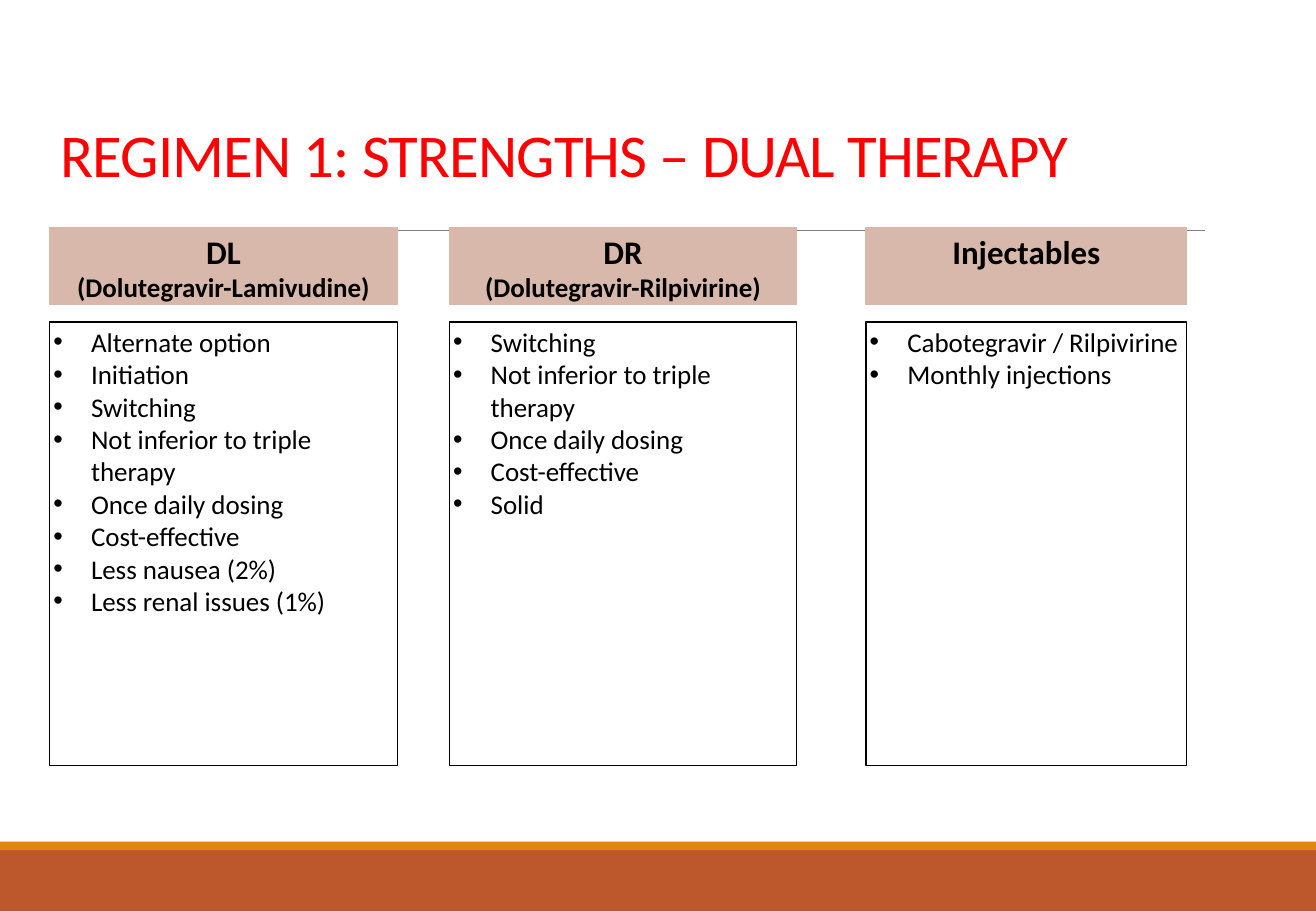
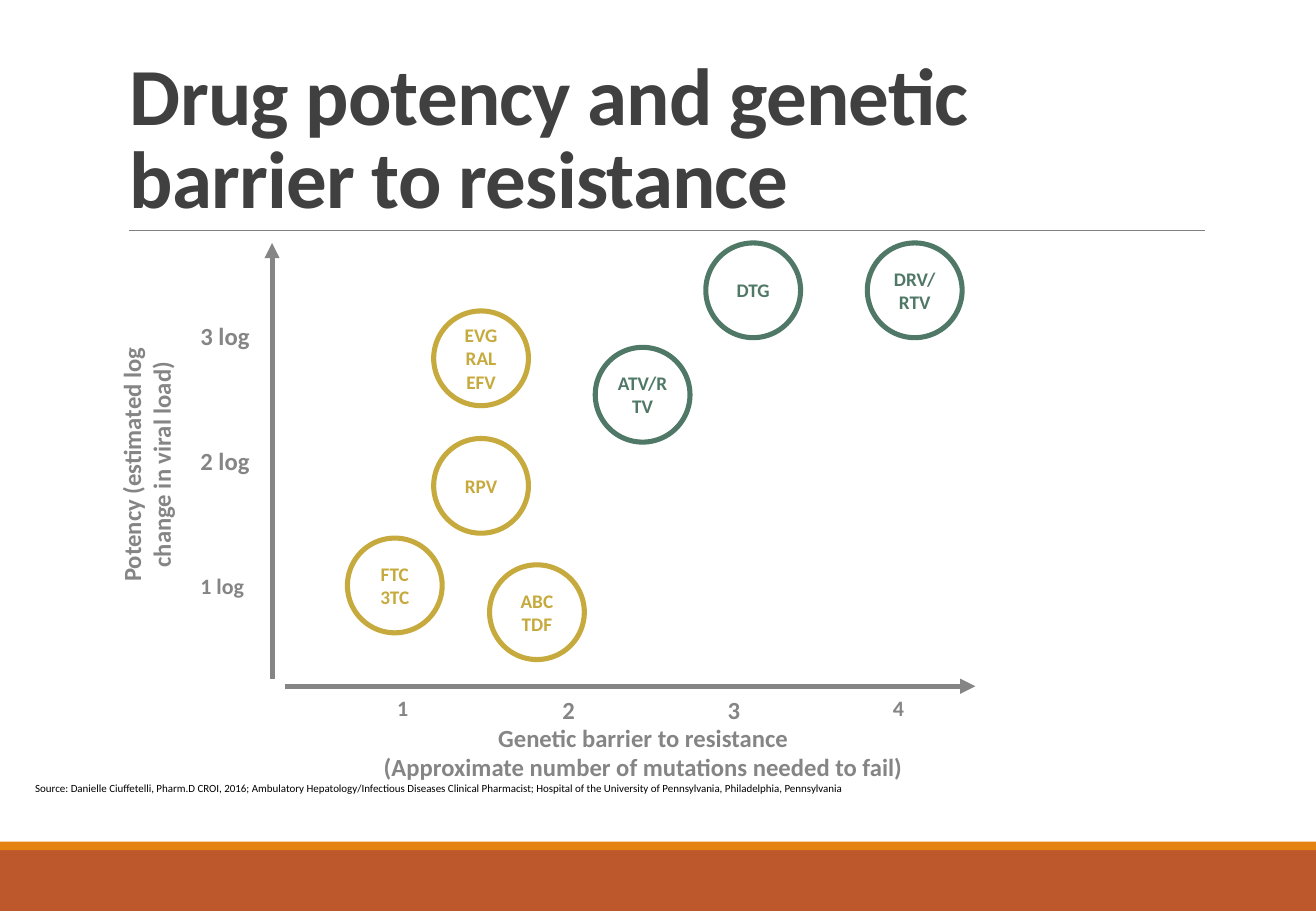
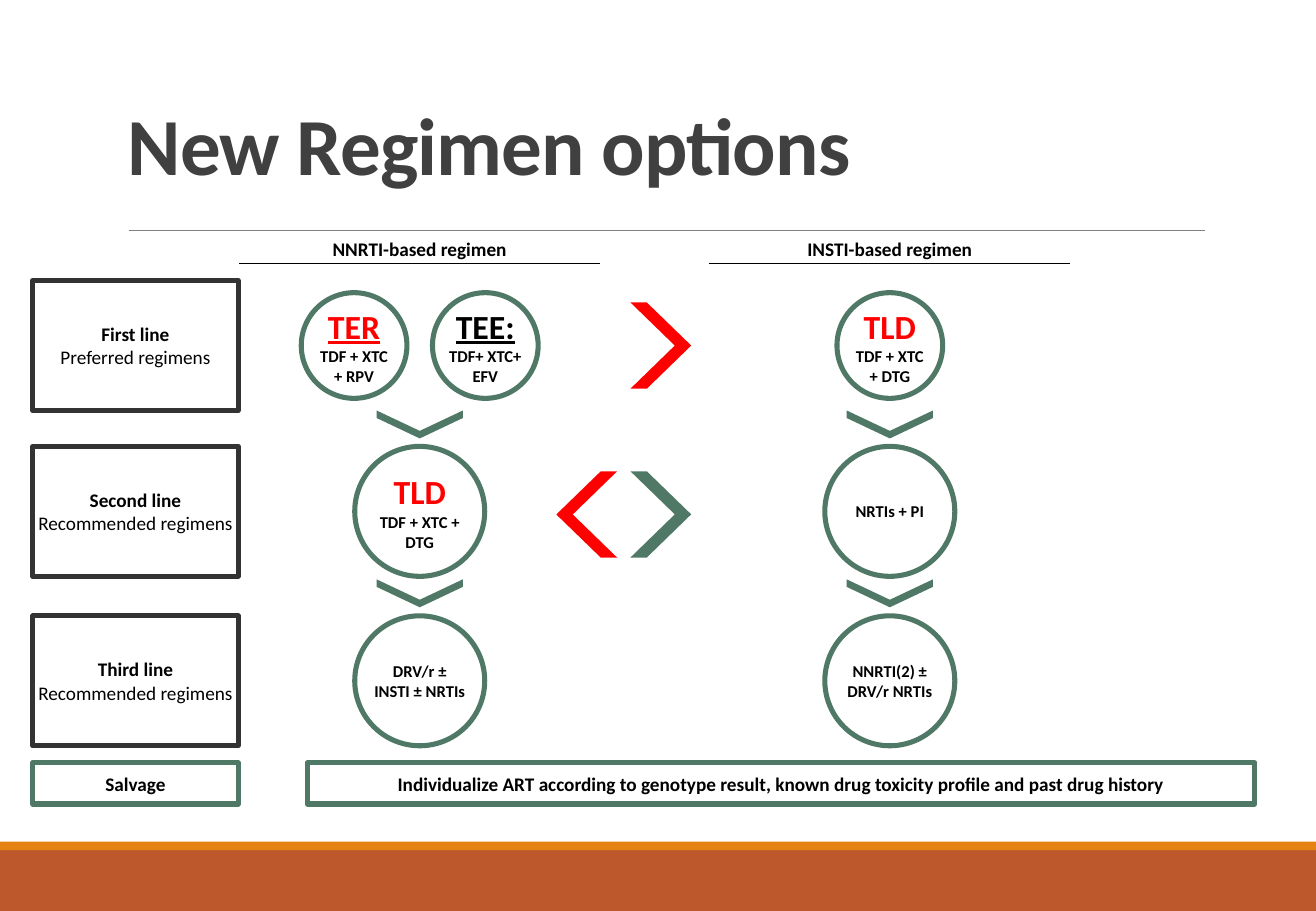
from lxml import etree
from pptx import Presentation
from pptx import util as u
from pptx.dml.color import RGBColor
from pptx.enum import shapes, text
from pptx.oxml.ns import qn

# The slide is a grid of 130 columns by 90 rows.
COLS, ROWS = 130, 90
WIDE, HIGH = u.Inches(10.83), u.Inches(7.5)

FONT = "Calibri"
BLACK, WHITE, RED = "000000", "FFFFFF", "FF0000"
RUST, ORANGE, RULE = "BD582C", "E48312", "808080"
DARK, FRAME, GREY = "404040", "333333", "858585"
GREEN, GOLD, ROSE = "507867", "C6AA3D", "D7B8AB"

MID, LEFT = text.PP_ALIGN.CENTER, text.PP_ALIGN.LEFT
TOP, CORE, BASE = (text.MSO_ANCHOR.TOP, text.MSO_ANCHOR.MIDDLE,
                   text.MSO_ANCHOR.BOTTOM)
RECT, OVAL, ARROW = (shapes.MSO_SHAPE.RECTANGLE, shapes.MSO_SHAPE.OVAL,
                     shapes.MSO_SHAPE.CHEVRON)


def color(code):
    return RGBColor.from_string(code)


def grid(x, y, *size):
    """Turn column and row pairs into slide lengths."""
    units = (WIDE / COLS, HIGH / ROWS)
    return [round(v * units[i % 2]) for i, v in enumerate((x, y) + size)]


def center(x, y, w, h):
    return x - w / 2, y - h / 2, w, h


def write(shape, lines, anchor=TOP, pad=0.03, **form):
    """Fill a shape; a line is a string or (string, own format)."""
    frame = shape.text_frame
    frame.word_wrap = True
    frame.auto_size = text.MSO_AUTO_SIZE.NONE
    frame.vertical_anchor = anchor
    frame.margin_left = frame.margin_right = u.Inches(pad)
    frame.margin_top = frame.margin_bottom = u.Inches(min(pad, 0.05))
    for i, line in enumerate(lines):
        words, own = (line, {}) if isinstance(line, str) else line
        para = frame.paragraphs[0] if i == 0 else frame.add_paragraph()
        style(para, words, **{**form, **own})


def style(para, words, size=16, ink=BLACK, bold=False, line=False,
          align=LEFT, bullet=False, before=0, space=None, track=None):
    para.alignment = align
    para.space_before = u.Pt(before)
    if space:
        para.line_spacing = space
    run = para.add_run()
    run.text = words
    font = run.font
    font.name, font.size = FONT, u.Pt(size)
    font.bold, font.underline = bold, line
    font.color.rgb = color(ink)
    if track:
        font._element.set("spc", str(track))
    if bullet:
        prop = para._p.get_or_add_pPr()
        prop.set("marL", str(u.Inches(0.31)))
        prop.set("indent", str(-u.Inches(0.31)))
        etree.SubElement(prop, qn("a:buFont"), typeface="Arial")
        etree.SubElement(prop, qn("a:buChar"), char="•")


def draw(slide, kind, area, fill=WHITE, edge=None, width=3, turn=0):
    shape = slide.shapes.add_shape(kind, *grid(*area))
    shape.shadow.inherit = False
    shape.fill.solid()
    shape.fill.fore_color.rgb = color(fill)
    if edge:
        shape.line.color.rgb = color(edge)
        shape.line.width = u.Pt(width)
    else:
        shape.line.fill.background()
    shape.rotation = turn
    return shape


def label(slide, area, lines, turn=0, **form):
    box = slide.shapes.add_textbox(*grid(*area))
    box.rotation = turn
    write(box, lines, **form)


def rule(slide, ends, ink, width, head=False):
    line = slide.shapes.add_connector(shapes.MSO_CONNECTOR.STRAIGHT,
                                      *grid(*ends))
    line.line.color.rgb = color(ink)
    line.line.width = u.Pt(width)
    prop = line.element.spPr
    if head:
        etree.SubElement(prop.find(qn("a:ln")), qn("a:tailEnd"),
                         type="triangle")
    etree.SubElement(prop, qn("a:effectLst"))
    return line


def circle(slide, x, y, wide, lines, edge=GREEN, **form):
    """Draw a ring around the center x, y."""
    ring = draw(slide, OVAL, center(x, y, wide, wide), edge=edge)
    write(ring, lines, anchor=CORE, pad=0, align=MID, bold=True, **form)


def panel(slide, area, lines, edge):
    box = draw(slide, RECT, area, edge=edge)
    write(box, lines, anchor=CORE, align=MID, size=11.4)


def wedge(slide, x, y, w, fill, turn):
    mark = draw(slide, ARROW, center(x, y, w, 8.52), fill=fill, turn=turn)
    mark.adjustments[0] = 0.73


def brand(layout, slide):
    """Move the bands and the title rule into the layout."""
    parts = [draw(slide, RECT, (0, 84, COLS, 6), RUST),
             draw(slide, RECT, (0, 83.16, COLS, 0.84), ORANGE),
             rule(slide, (12.72, 22.8, 119.04, 22.8), RULE, 0.5)]
    for part in parts:
        layout.shapes.element.append(part.element)


def start(deck, title, x, y, size=48, ink=DARK, bold=True):
    slide = deck.slides.add_slide(deck.slide_layouts[5])
    head = slide.shapes.title
    head.left, head.top, head.width, head.height = grid(x, y, 107.28, 19.08)
    write(head, [title], anchor=BASE, pad=0.1, size=size, ink=ink,
          bold=bold, space=0.85, track=-50)
    return slide


def strengths(deck):
    slide = start(deck, "REGIMEN 1: STRENGTHS – DUAL THERAPY", 4.8, 0.24,
                  size=36, ink=RED, bold=False)
    shared = ["Not inferior to triple therapy", "Once daily dosing",
              "Cost-effective"]
    columns = [
        (4.92, 34.32, ["DL", "(Dolutegravir-Lamivudine)"],
         ["Alternate option", "Initiation", "Switching", *shared,
          "Less nausea (2%)", "Less renal issues (1%)"]),
        (44.4, 34.32, ["DR", "(Dolutegravir-Rilpivirine)"],
         ["Switching", *shared, "Solid"]),
        (85.56, 31.68, ["Injectables"],
         ["Cabotegravir / Rilpivirine", "Monthly injections"]),
    ]
    for x, w, (name, *drugs), items in columns:
        body = draw(slide, RECT, (x, 31.8, w, 43.8), edge=BLACK, width=0.75)
        write(body, items, bullet=True)
        head = draw(slide, RECT, (x, 22.5, w, 7.56), ROSE, ROSE, 0.75)
        write(head, [(name, {"size": 19.5}), *drugs], bold=True, align=MID)
    return slide


def potency(deck):
    slide = start(deck, "Drug potency and genetic barrier to resistance",
                  11.64, 3.72)
    rule(slide, (28.2, 67.8, 96.36, 67.8), GREY, 3, head=True)
    rule(slide, (26.88, 67.08, 26.88, 24), GREY, 3, head=True)
    note = {"ink": GREY, "bold": True}
    label(slide, center(13.86, 45.9, 26.4, 5.4),
          ["Potency (estimated log", "change in viral load)"],
          turn=270, size=14.6, align=MID, **note)
    label(slide, (29.52, 71.04, 68.04, 4.92),
          ["Genetic barrier to resistance",
           "(Approximate number of mutations needed to fail)"],
          size=14.6, align=MID, **note)
    for i, size in enumerate((13, 14.6, 14.6, 13)):
        label(slide, (38.88 + 16.32 * i, 68.28, 3, 3.72), [str(i + 1)],
              size=size, **note)
    for i, size in enumerate((13, 14.6, 14.6)):
        label(slide, (19.44, 56.16 - 12.42 * i, 7, 3.72), [f"{i + 1} log"],
              size=size, **note)
    drugs = [
        (39, 57.84, GOLD, ["FTC", "3TC"]),
        (53.04, 60.48, GOLD, ["ABC", "TDF"]),
        (47.52, 48, GOLD, ["RPV"]),
        (47.52, 35.4, GOLD, ["EVG", "RAL", "EFV"]),
        (63.48, 39, GREEN, ["ATV/R", "TV"]),
        (74.4, 28.68, GREEN, ["DTG"]),
        (90.36, 28.68, GREEN, ["DRV/", "RTV"]),
    ]
    for x, y, ink, names in drugs:
        circle(slide, x, y, 9.36, names, edge=ink, ink=ink, size=11.4)
    label(slide, (3.48, 77.16, 123, 1.32),
          ["Source: Danielle Ciuffetelli, Pharm.D CROI, 2016; Ambulatory "
           "Hepatology/Infectious Diseases Clinical Pharmacist; Hospital of "
           "the University of Pennsylvania, Philadelphia, Pennsylvania"],
          anchor=BASE, pad=0, size=6.5)


def options(deck):
    slide = start(deck, "New Regimen options", 11.4, 0.48)
    old, new = 41.46, 87.9
    first, second, third = 34.14, 50.52, 67.26
    small, big = 10.44, 12.84
    strong = {"bold": True, "before": 2.4}
    ranks = [(first, "First line", "Preferred regimens"),
             (second, "Second line", "Recommended regimens"),
             (third, "Third line", "Recommended regimens")]
    for y, rank, kind in ranks:
        panel(slide, (3.24, y - big / 2, 20.28, big),
              [(rank, strong), kind], FRAME)

    for x, name in ((old, "NNRTI"), (new, "INSTI")):
        label(slide, (x - 17.82, 22.92, 35.64, 3.12),
              [f"{name}-based regimen"], anchor=BASE, size=11.4, bold=True,
              align=MID)
        rule(slide, (x - 17.82, 26.04, x + 17.82, 26.04), BLACK, 0.75)
        for y in (41.94, 58.62):
            wedge(slide, x, y, 2.76, GREEN, 90)

    hot = {"size": 20, "ink": RED}
    mark = {"size": 20, "line": True}
    tld = [("TLD", hot), "TDF + XTC + DTG"]
    steps = [
        (old - 6.48, first, small,
         [("TER", {**mark, "ink": RED}), "TDF + XTC + RPV"]),
        (old + 6.48, first, small, [("TEE:", mark), "TDF+ XTC+ EFV"]),
        (new, first, small, tld),
        (old, second, big, tld),
        (new, second, big, ["NRTIs + PI"]),
        (old, third, big, ["DRV/r ± INSTI ± NRTIs"]),
        (new, third, big, ["NNRTI(2) ±", "DRV/r NRTIs"]),
    ]
    for x, y, wide, lines in steps:
        circle(slide, x, y, wide, lines, size=9.8)

    for x, y, ink, turn in ((65.28, first, RED, 0), (65.28, 50.82, GREEN, 0),
                            (57.96, 50.82, RED, 180)):
        wedge(slide, x, y, 6, ink, turn)
    for x, w, words in (
            (3.24, 20.28, "Salvage"),
            (30.36, 93.6, "Individualize ART according to genotype result, "
             "known drug toxicity profile and past drug history")):
        panel(slide, (x, 75.36, w, 4.08), [(words, strong)], GREEN)


def main():
    deck = Presentation()
    deck.slide_width, deck.slide_height = WIDE, HIGH
    brand(deck.slide_layouts[5], strengths(deck))
    potency(deck)
    options(deck)
    deck.save("out.pptx")


if __name__ == "__main__":
    main()
